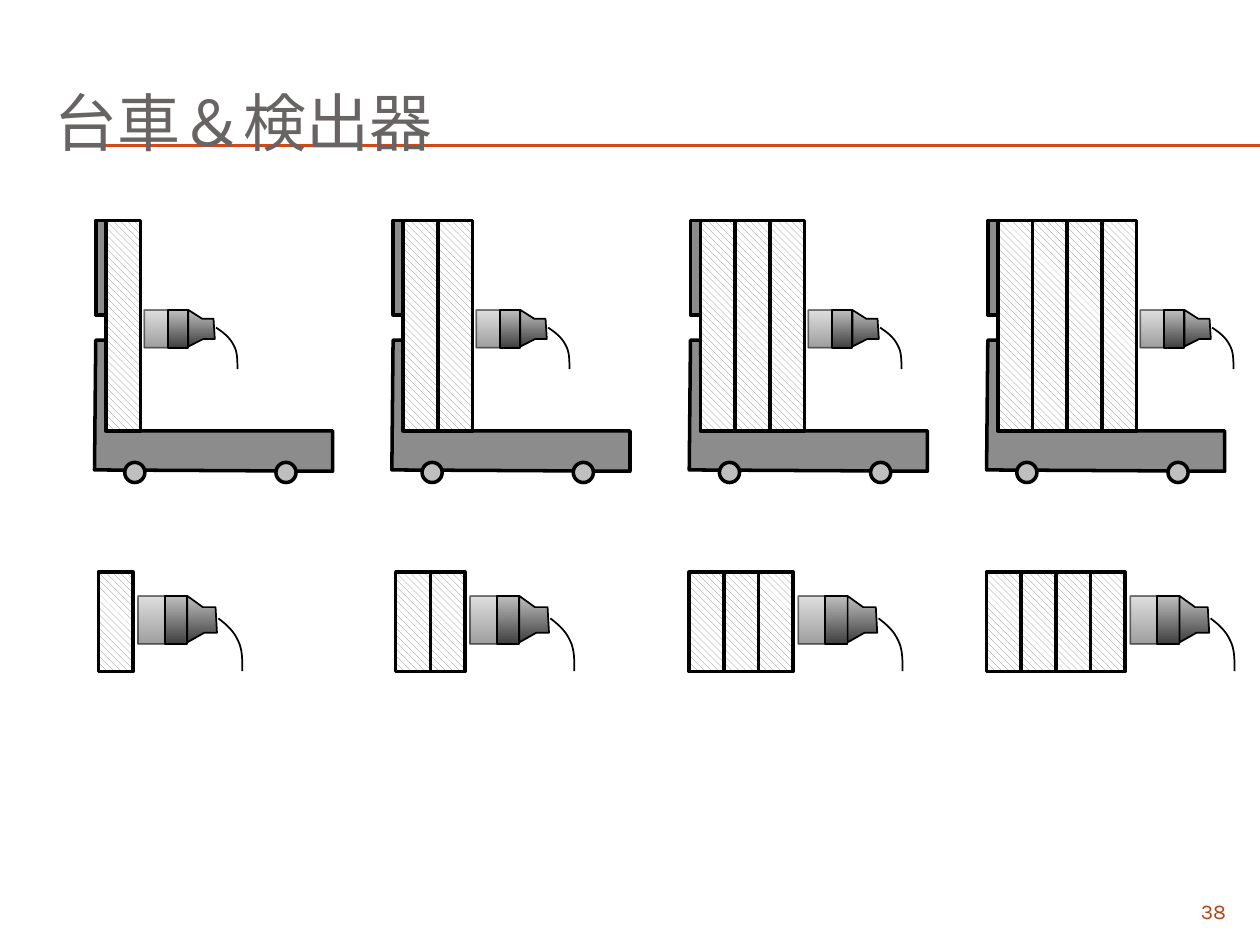
from lxml import etree
from pptx import Presentation
from pptx.dml.color import RGBColor
from pptx.enum import dml, shapes, text
from pptx.oxml import ns
from pptx.util import Inches, Pt

HUES = {
    "rule": "D34817",
    "title": "696464",
    "page": "BA4014",
    "ink": "000000",
    "steel": "808080",
    "dark": "404040",
    "light": "BFBFBF",
    "white": "FFFFFF",
}
FONT = "Karla"
RECT = shapes.MSO_SHAPE.RECTANGLE
OVAL = shapes.MSO_SHAPE.OVAL


def hue(name):
    return RGBColor.from_string(HUES[name])


def ink(shape, width):
    shape.shadow.inherit = False
    shape.line.color.rgb = hue("ink")
    shape.line.width = Pt(width)


def fade(shape, part):
    for node in shape.fill._xPr.iter(ns.qn("a:srgbClr")):
        etree.SubElement(node, ns.qn("a:alpha"), val=str(part * 1000))


def flat(shape, name):
    shape.fill.solid()
    shape.fill.fore_color.rgb = hue(name)


def shade(shape):
    shape.fill.gradient()
    shape.fill.gradient_angle = 270
    for stop, name in zip(shape.fill.gradient_stops, ("light", "dark")):
        stop.color.rgb = hue(name)


def hatch(shape):
    shape.fill.patterned()
    shape.fill.pattern = dml.MSO_PATTERN.WIDE_DOWNWARD_DIAGONAL
    shape.fill.fore_color.rgb = hue("steel")
    shape.fill.back_color.rgb = hue("white")


def box(owner, kind, x, y, w, h):
    return owner.add_shape(kind, Inches(x), Inches(y), Inches(w), Inches(h))


def line(owner, x1, y1, x2, y2, name, width):
    link = owner.add_connector(shapes.MSO_CONNECTOR.STRAIGHT,
                               Inches(x1), Inches(y1), Inches(x2), Inches(y2))
    link.line.color.rgb = hue(name)
    link.line.width = Pt(width)
    etree.SubElement(link._element.spPr, ns.qn("a:effectLst"))


def outline(owner, points, close=True):
    spots = [(Inches(x), Inches(y)) for x, y in points]
    pen = owner.build_freeform(*spots[0])
    pen.add_line_segments(spots[1:], close=close)
    return pen.convert_to_shape()


def curve(a, b, c, d, steps=8):
    def at(t):
        u = 1 - t
        return tuple(u**3 * p + 3 * u * u * t * q + 3 * u * t * t * r + t**3 * s
                     for p, q, r, s in zip(a, b, c, d))
    return [at(i / steps) for i in range(steps + 1)]


def cart(owner, x):
    frame = outline(owner, [(x + 0.01, 2.7), (x + 0.09, 2.7), (x + 0.1, 3.42),
                            (x + 1.89, 3.42), (x + 1.89, 3.74), (x, 3.73)])
    post = box(owner, RECT, x + 0.01, 1.75, 0.08, 0.75)
    for part in (frame, post):
        flat(part, "steel")
        fade(part, 90)
        ink(part, 2)


def wheels(owner, x):
    for step in (0.24, 1.44):
        wheel = box(owner, OVAL, x + step, 3.67, 0.16, 0.16)
        flat(wheel, "light")
        ink(wheel, 2)


def slabs(owner, x, y, h, count):
    width = 1.1 * count / 4
    block = box(owner, RECT, x, y, width, h)
    hatch(block)
    ink(block, 2)
    for i in range(1, count):
        cut = x + width * i / count
        line(owner, cut, y, cut, y + h, "ink", 2)
    return x + width


def probe(owner, x, y, wide=1, tall=1):
    def place(points):
        return [(x + a * wide, y + b * tall) for a, b in points]

    group = owner.add_group_shape().shapes
    face = box(group, RECT, x, y, 0.2 * wide, 0.3 * tall)
    body = box(group, RECT, x + 0.19 * wide, y, 0.16 * wide, 0.3 * tall)
    neck = outline(group, place([(0.35, 0.29), (0.47, 0.23), (0.56, 0.23),
                                 (0.55, 0.07), (0.46, 0.07), (0.35, 0)]))
    for part in (face, body, neck):
        shade(part)
        ink(part, 1)
    fade(face, 50)
    bend = curve((0.57, 0.14), (0.63, 0.18), (0.68, 0.22), (0.71, 0.28))
    drop = curve((0.71, 0.28), (0.74, 0.33), (0.74, 0.4), (0.74, 0.47))
    cord = outline(group, place(bend + drop[1:]), close=False)
    cord.fill.background()
    ink(cord, 1)


def write(shape, words, size, name, align):
    frame = shape.text_frame
    frame.word_wrap = True
    frame.auto_size = text.MSO_AUTO_SIZE.NONE
    frame.text = words
    para = frame.paragraphs[0]
    para.alignment = align
    para.font.name = FONT
    para.font.size = Pt(size)
    para.font.color.rgb = hue(name)


def title(slide, words):
    head = slide.shapes.title
    head.left, head.top = Inches(0.33), Inches(0.5)
    head.width, head.height = Inches(9.5), Inches(0.92)
    write(head, words, 36, "title", text.PP_ALIGN.LEFT)
    head.text_frame.vertical_anchor = text.MSO_ANCHOR.MIDDLE
    slide.shapes._spTree.append(head._element)


def main():
    deck = Presentation()
    deck.slide_width, deck.slide_height = Inches(10), Inches(7.5)
    slide = deck.slides.add_slide(deck.slide_layouts[5])
    owner = slide.shapes
    for y in (1.15, 1.16):
        line(owner, 0.56, y, 10, y, "rule", 0.75)
    title(slide, "台車＆検出器")
    page = owner.add_textbox(Inches(9), Inches(7.08), Inches(0.83), Inches(0.27))
    write(page, "38", 12, "page", text.PP_ALIGN.RIGHT)

    for i, low in enumerate((0.78, 3.14, 5.47, 7.83)):
        x = 0.75 + 2.36 * i
        cart(owner, x)
        edge = slabs(owner, x + 0.09, 1.75, 1.67, i + 1)
        probe(owner, edge + 0.03, 2.46)
        wheels(owner, x)
        edge = slabs(owner, low, 4.54, 0.79, i + 1)
        probe(owner, edge + 0.04, 4.73, 1.12, 1.27)

    deck.save("out.pptx")


if __name__ == "__main__":
    main()
